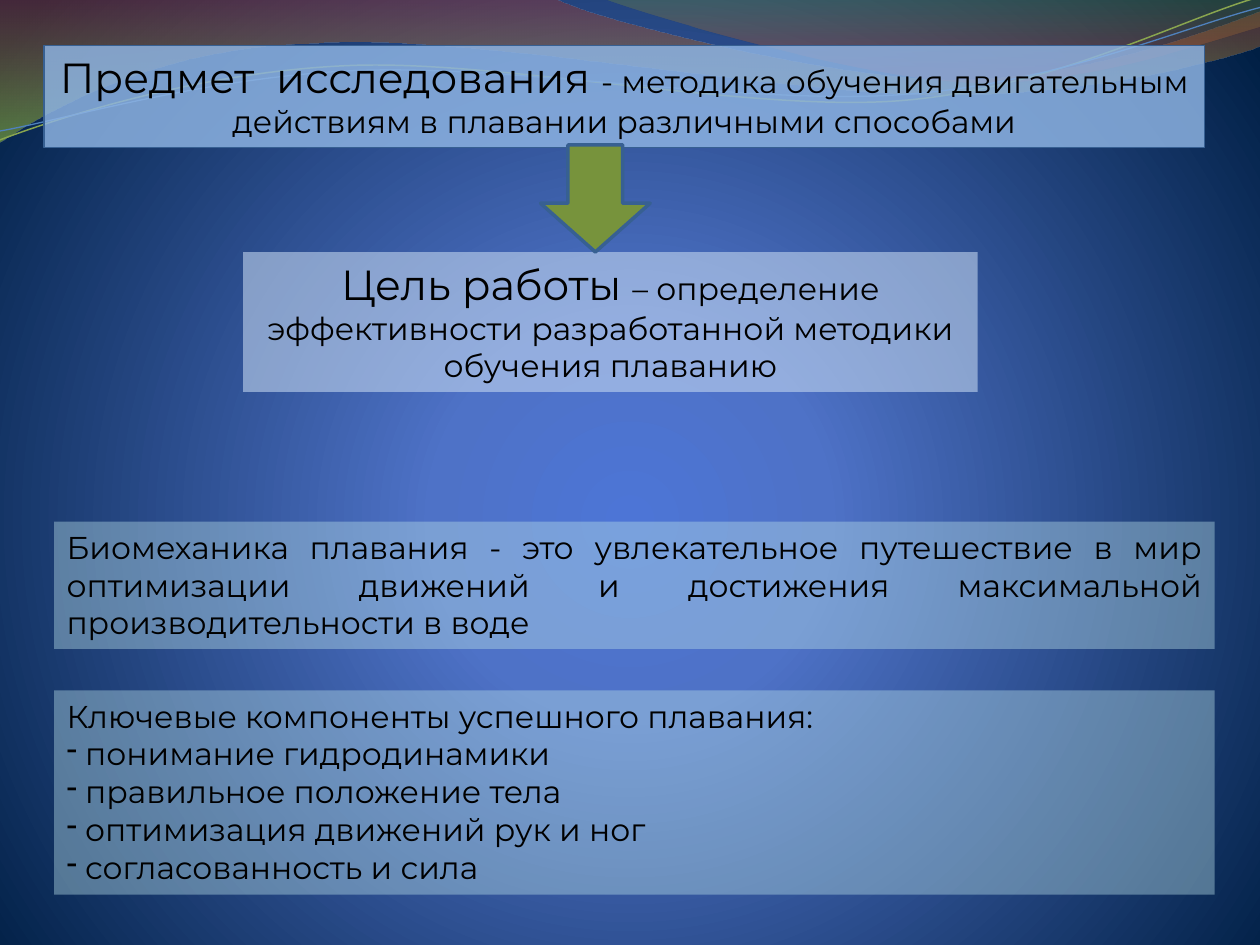
import math

import pptx
import pptx.util
import pptx.dml.color
import pptx.enum.shapes
import pptx.enum.text
import pptx.oxml
import pptx.oxml.ns
from pptx.util import Inches

HEX = {
    "black": "000000", "edge": "376092", "sky": "8EB4E3", "pale": "C6D9F1",
    "aqua": "B7DEE8", "leaf": "77933C", "olive": "89A54F", "blue": "4F81BD",
    "red": "973330", "lime": "95C238", "moss": "769537", "rust": "BE3330",
    "glow": "4D75D6", "mid": "4E72C7", "navy": "001F44",
}
FONT = "Montserrat"
ALIGN = pptx.enum.text.PP_ALIGN
KIND = pptx.enum.shapes.MSO_SHAPE
NS = pptx.oxml.ns.nsdecls("a")
TILT = 357.3


def color(name):
    return pptx.dml.color.RGBColor.from_string(HEX[name])


def grad(stops, shade):
    """Gradient fill element; each stop is position, colour, opacity in %."""
    parts = "".join(
        f'<a:gs pos="{pos * 1000}"><a:srgbClr val="{HEX[name]}">'
        f'<a:alpha val="{alpha * 1000}"/></a:srgbClr></a:gs>'
        for pos, name, alpha in stops)
    return pptx.oxml.parse_xml(
        f'<a:gradFill {NS} rotWithShape="1">'
        f'<a:gsLst>{parts}</a:gsLst>{shade}</a:gradFill>')


def paint(shape, fill=None, alpha=100, line=None, width=1):
    shape.shadow.inherit = False
    if fill:
        shape.fill.solid()
        shape.fill.fore_color.rgb = color(fill)
        if alpha < 100:
            rgb = next(shape.fill._xPr.iter(pptx.oxml.ns.qn("a:srgbClr")))
            rgb.append(pptx.oxml.parse_xml(
                f'<a:alpha {NS} val="{alpha * 1000}"/>'))
    else:
        shape.fill.background()
    if line:
        shape.line.color.rgb = color(line)
        shape.line.width = pptx.util.Pt(width)
    else:
        shape.line.fill.background()


def curve(slide, start, parts, close):
    """Freeform of straight parts (2 numbers) and Bezier parts (6 numbers)."""
    dots = [(Inches(x), Inches(y)) for part in parts
            for x, y in zip(part[::2], part[1::2])]
    pen = slide.shapes.build_freeform(*map(Inches, start))
    pen.add_line_segments(dots, close=close)
    shape = pen.convert_to_shape()
    # Join each three points of a Bezier part into one curve
    legs = iter(list(shape._element.iter(pptx.oxml.ns.qn("a:lnTo"))))
    for part in parts:
        group = [next(legs) for _ in range(len(part) // 2)]
        if len(group) == 3:
            bend = pptx.oxml.parse_xml(f"<a:cubicBezTo {NS}/>")
            group[0].addprevious(bend)
            for leg in group:
                bend.append(leg[0])
                leg.getparent().remove(leg)
    return shape


def level(part, pivot):
    """Turn the points of a part back by the tilt around the pivot."""
    turn = math.radians(360 - TILT)
    cos, sin = math.cos(turn), math.sin(turn)
    out = []
    for x, y in zip(part[::2], part[1::2]):
        dx, dy = x - pivot[0], y - pivot[1]
        out += [pivot[0] + dx * cos - dy * sin, pivot[1] + dx * sin + dy * cos]
    return out


def backdrop(slide):
    # Radial background
    fill = slide.background.fill
    fill.solid()
    old = fill._xPr.find(pptx.oxml.ns.qn("a:solidFill"))
    shade = ('<a:path path="circle"><a:fillToRect l="10000" t="110000" '
             'r="10000" b="100000"/></a:path>')
    fill._xPr.replace(old, grad(
        [(0, "glow", 100), (25, "mid", 100), (100, "navy", 100)], shade))

    # Filled waves
    bands = [
        ((0, 0), [(4.4, -0.01), (4.76, 0.17, 6.64, 0.63, 7.58, 0.63),
                  (8.53, 0.63, 9.58, 0.26, 10, 0.09), (10.01, 0.36),
                  (9.83, 0.44, 8.7, 0.76, 7.46, 0.75),
                  (6.22, 0.75, 3.82, 0.28, 2.57, 0.34),
                  (1.29, 0.36, 0.46, 0.83, -0.01, 1.13), (0, 0)],
         [(0, "red", 45), (100, "lime", 55)]),
        ((4.79, -0.01), [(5.09, 0.11, 6.82, 0.62, 7.69, 0.65),
                         (8.56, 0.69, 9.61, 0.32, 10, 0.21), (10, 0),
                         (4.79, -0.01)],
         [(0, "moss", 30), (80, "rust", 45)]),
    ]
    for start, parts, stops in bands:
        band = curve(slide, start, parts, True)
        paint(band)
        props = band.fill._xPr
        props.replace(props.find(pptx.oxml.ns.qn("a:noFill")),
                      grad(stops, '<a:lin ang="5400000" scaled="1"/>'))

    # Thin tilted lines
    lines = [
        ((0, 1.11), [(0.48, 0.93, 1.58, 0.57, 2.77, 0.52),
                     (3.95, 0.47, 5.93, 0.89, 7.13, 0.8),
                     (8.33, 0.71, 9.38, 0.15, 9.98, -0.02)],
         (4.99, 0.58), "olive", 0.85),
        ((0, 1.04), [(0.47, 0.96, 1.64, 0.61, 2.83, 0.56),
                     (4.03, 0.51, 5.97, 0.84, 7.17, 0.75),
                     (8.36, 0.67, 9.41, 0.21, 10, 0.06)],
         (5, 0.59), "blue", 0.75),
    ]
    pair = []
    for start, parts, pivot, line, width in lines:
        shape = curve(slide, level(start, pivot),
                      [level(part, pivot) for part in parts], False)
        shape.rotation = TILT
        paint(shape, line=line, width=width)
        pair.append(shape)
    slide.shapes.add_group_shape(pair)


def panel(slide, box, paras, align, **look):
    """Text panel; each paragraph is a list of (text, size) runs."""
    shape = slide.shapes.add_shape(KIND.RECTANGLE, *map(Inches, box))
    paint(shape, **look)
    frame = shape.text_frame
    frame.word_wrap = True
    frame.auto_size = pptx.enum.text.MSO_AUTO_SIZE.SHAPE_TO_FIT_TEXT
    frame.vertical_anchor = pptx.enum.text.MSO_ANCHOR.TOP
    for num, runs in enumerate(paras):
        para = frame.add_paragraph() if num else frame.paragraphs[0]
        para.alignment = align
        for text, size in runs:
            run = para.add_run()
            run.text = text
            run.font.name = FONT
            run.font.size = pptx.util.Pt(size)
            run.font.color.rgb = color("black")
    return frame


def arrow(slide, box):
    shape = slide.shapes.add_shape(KIND.DOWN_ARROW, *map(Inches, box))
    shape.adjustments[1] = 0.455
    paint(shape, "leaf", line="edge", width=2)


def keys(slide, box, head, items):
    """Panel with a heading line and dashed items."""
    paras = [[(head, 18)]] + [[(" " + item, 18)] for item in items]
    frame = panel(slide, box, paras, ALIGN.JUSTIFY, fill="aqua", alpha=42)
    for para in frame.paragraphs[1:]:
        props = para._p.get_or_add_pPr()
        for mark in ("buFontTx", 'buChar char="-"'):
            props.append(pptx.oxml.parse_xml(f"<a:{mark} {NS}/>"))


def main():
    deck = pptx.Presentation()
    deck.slide_width, deck.slide_height = Inches(10), Inches(7.5)
    slide = deck.slides.add_slide(deck.slide_layouts[6])
    backdrop(slide)

    # Subject, then goal
    panel(slide, (0.35, 0.36, 9.21, 0.81), [[
        ("Предмет  исследования ", 24),
        ("- методика обучения двигательным действиям в плавании "
         "различными способами", 18)]],
        ALIGN.CENTER, fill="sky", alpha=83, line="edge", width=0.75)
    panel(slide, (1.93, 2, 5.83, 1.11), [[
        ("Цель работы ", 24),
        ("– определение эффективности разработанной методики "
         "обучения плаванию", 18)]],
        ALIGN.CENTER, fill="pale", alpha=58)
    arrow(slide, (4.29, 1.15, 0.87, 0.85))

    # Biomechanics and key components
    panel(slide, (0.43, 4.14, 9.21, 1.01), [[
        ("Биомеханика плавания - это увлекательное путешествие в мир "
         "оптимизации движений и достижения максимальной "
         "производительности в воде", 18)]],
        ALIGN.JUSTIFY, fill="aqua", alpha=42)
    keys(slide, (0.43, 5.48, 9.21, 1.62),
         "Ключевые компоненты успешного плавания:",
         ["понимание гидродинамики", "правильное положение тела",
          "оптимизация движений рук и ног", "согласованность и сила"])
    deck.save("out.pptx")


if __name__ == "__main__":
    main()
